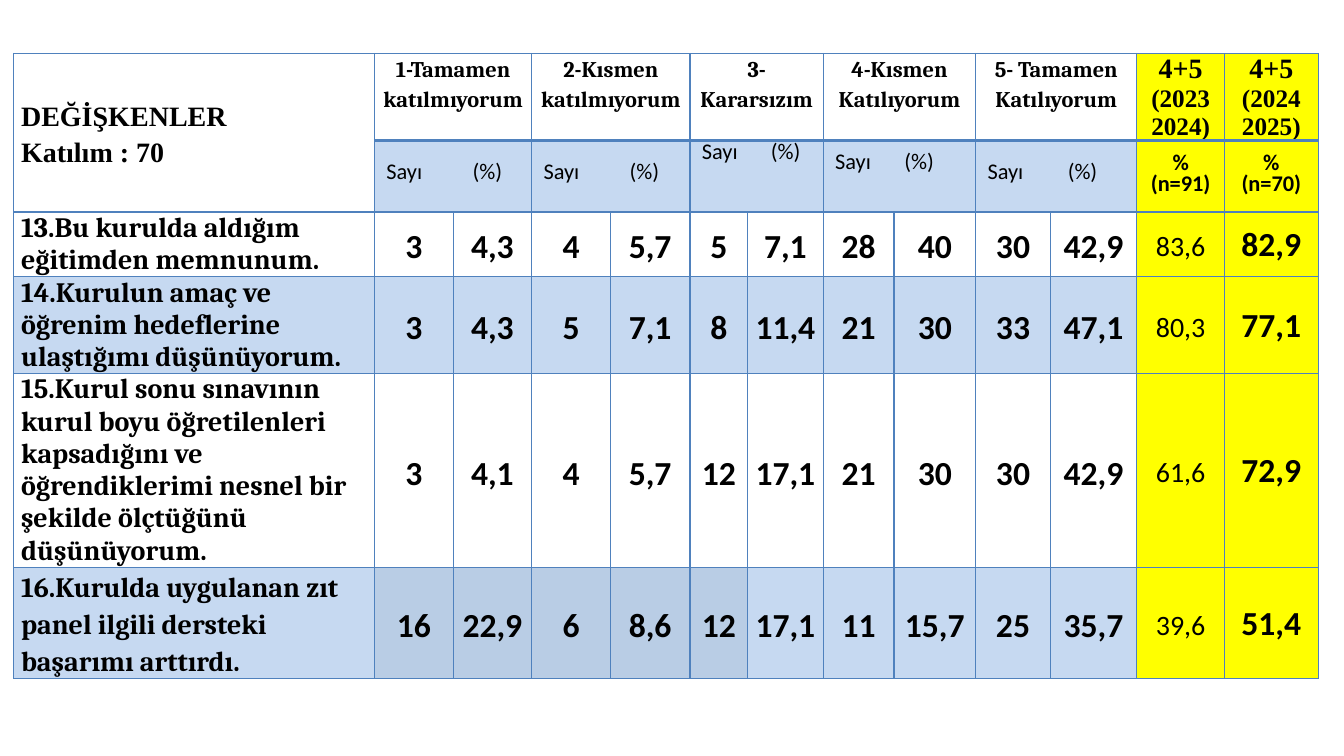
import pptx
import pptx.dml.color
import pptx.enum.text
import pptx.oxml
import pptx.oxml.ns
import pptx.util
from lxml import etree

Cm = pptx.util.Cm
Pt = pptx.util.Pt
CENTER = pptx.enum.text.PP_ALIGN.CENTER
LEFT = pptx.enum.text.PP_ALIGN.LEFT
MIDDLE = pptx.enum.text.MSO_ANCHOR.MIDDLE
TOP = pptx.enum.text.MSO_ANCHOR.TOP

WHITE, PALE, DEEP, YELLOW = "FFFFFF", "C6D9F1", "B9CDE5", "FFFF00"
BORDER = "4F81BD"
COLUMN_WIDTHS = [9.09, 1.98, 1.98, 1.98, 2.01, 1.45, 1.91, 1.78, 2.06, 1.88, 2.18, 2.21, 2.36]
ROW_HEIGHTS = [2.19, 1.79, 1.64, 2.45, 4.9, 2.8]

ANSWERS = [
    ("1-Tamamen katılmıyorum", 2.17, 0),
    ("2-Kısmen katılmıyorum", 2.17, 0),
    ("3-Kararsızım", 1.74, 1),
    ("4-Kısmen Katılıyorum", 1.74, 0.5),
    ("5- Tamamen Katılıyorum", 2.02, 0),
]
YEARS = [("(2023 2024)", "(n=91)"), ("(2024 2025)", "(n=70)")]
QUESTIONS = [
    ("13.Bu kurulda aldığım eğitimden memnunum.",
     "3 4,3 4 5,7 5 7,1 28 40 30 42,9 83,6 82,9"),
    ("14.Kurulun amaç ve öğrenim hedeflerine ulaştığımı düşünüyorum.",
     "3 4,3 5 7,1 8 11,4 21 30 33 47,1 80,3 77,1"),
    ("15.Kurul sonu sınavının kurul boyu öğretilenleri kapsadığını ve "
     "öğrendiklerimi nesnel bir şekilde ölçtüğünü düşünüyorum.",
     "3 4,1 4 5,7 12 17,1 21 30 30 42,9 61,6 72,9"),
    ("16.Kurulda uygulanan zıt panel ilgili dersteki başarımı arttırdı.",
     "16 22,9 6 8,6 12 17,1 11 15,7 25 35,7 39,6 51,4"),
]


def color(value):
    return pptx.dml.color.RGBColor.from_string(value)


def draw_borders(cell, top=1, bottom=1):
    properties = cell._tc.get_or_add_tcPr()
    for position, (side, width) in enumerate(
            [("lnL", 1), ("lnR", 1), ("lnT", top), ("lnB", bottom)]):
        line = pptx.oxml.parse_xml(
            f'<a:{side} {pptx.oxml.ns.nsdecls("a")} w="{int(Pt(width))}">'
            f'<a:solidFill><a:srgbClr val="{BORDER}"/></a:solidFill></a:{side}>')
        properties.insert(position, line)


def fill_cell(cell, lines, fill=WHITE, font="Calibri", bold=True, align=CENTER,
              anchor=MIDDLE, spacing=None, margins=(0.18, 0, 0.18, 0)):
    cell.fill.solid()
    cell.fill.fore_color.rgb = color(fill)
    cell.vertical_anchor = anchor
    cell.margin_left, cell.margin_top, cell.margin_right, cell.margin_bottom = map(Cm, margins)
    for index, (text, size) in enumerate(lines):
        frame = cell.text_frame
        para = frame.add_paragraph() if index else frame.paragraphs[0]
        para.alignment = align
        para.line_spacing = spacing
        span = para.add_run()
        span.text = text
        span.font.name = font
        span.font.size = Pt(size)
        span.font.bold = bold
        span.font.color.rgb = color("000000")


def add_tab_stop(cell, position):
    properties = cell.text_frame.paragraphs[0]._p.get_or_add_pPr()
    stops = etree.SubElement(properties, pptx.oxml.ns.qn("a:tabLst"))
    etree.SubElement(stops, pptx.oxml.ns.qn("a:tab"), pos=str(int(Cm(position))), algn="l")


def fill_header(table):
    corner = table.cell(0, 0)
    corner.merge(table.cell(1, 0))
    fill_cell(corner, [("DEĞİŞKENLER", 20), ("Katılım : 70", 20)],
              font="Times New Roman", align=LEFT, spacing=1.15)
    for index, (answer, tab, lift) in enumerate(ANSWERS):
        column = 1 + 2 * index
        for row in (0, 1):
            table.cell(row, column).merge(table.cell(row, column + 1))
        fill_cell(table.cell(0, column), [(answer, 16)], font="Cambria",
                  anchor=TOP, spacing=1.15)
        units = table.cell(1, column)
        fill_cell(units, [("Sayı\t(%)", 16)], fill=PALE, bold=False, align=LEFT,
                  spacing=Pt(13), margins=(0.3, 0, 0.18, lift))
        add_tab_stop(units, tab)
    for column, (years, count) in enumerate(YEARS, 11):
        fill_cell(table.cell(0, column), [("4+5", 20), (years, 18)], fill=YELLOW,
                  font="Times New Roman", anchor=TOP)
        fill_cell(table.cell(1, column), [("%", 16), (count, 16)], fill=YELLOW,
                  spacing=Pt(15))


def fill_question(table, row, question, values):
    last = row == len(ROW_HEIGHTS) - 1
    band = PALE if row % 2 else WHITE
    fill_cell(table.cell(row, 0), [(question, 20)], fill=band, font="Cambria",
              align=LEFT, anchor=TOP, spacing=1.15 if last else None)
    for column, value in enumerate(values.split(), 1):
        cell = table.cell(row, column)
        if column == 12:
            fill_cell(cell, [(value, 24)], fill=YELLOW, margins=(0.03, 0.03, 0.03, 0))
        elif column == 11:
            fill_cell(cell, [(value, 20)], fill=YELLOW, bold=False, spacing=1.15)
        else:
            fill_cell(cell, [(value, 24)], fill=DEEP if last and column <= 5 else band,
                      spacing=1.15)


def add_survey_table(page, left, top, width, height):
    frame = page.shapes.add_table(len(ROW_HEIGHTS), len(COLUMN_WIDTHS),
                                  Cm(left), Cm(top), Cm(width), Cm(height))
    table = frame.table
    table.first_row = table.horz_banding = False
    for column, share in zip(table.columns, COLUMN_WIDTHS):
        column.width = Cm(width * share / sum(COLUMN_WIDTHS))
    for row, share in zip(table.rows, ROW_HEIGHTS):
        row.height = Cm(height * share / sum(ROW_HEIGHTS))
    fill_header(table)
    for row, (question, values) in enumerate(QUESTIONS, 2):
        fill_question(table, row, question, values)
    for row in range(len(ROW_HEIGHTS)):
        for column in range(len(COLUMN_WIDTHS)):
            draw_borders(table.cell(row, column),
                         top=2.25 if row == 1 and column else 1,
                         bottom=2.25 if row == 0 and column else 1)


def main():
    deck = pptx.Presentation()
    deck.slide_width, deck.slide_height = Cm(33.87), Cm(19.05)
    page = deck.slides.add_slide(deck.slide_layouts[6])
    add_survey_table(page, 0.35, 1.35, 32.87, 15.72)
    deck.save("out.pptx")


if __name__ == "__main__":
    main()
